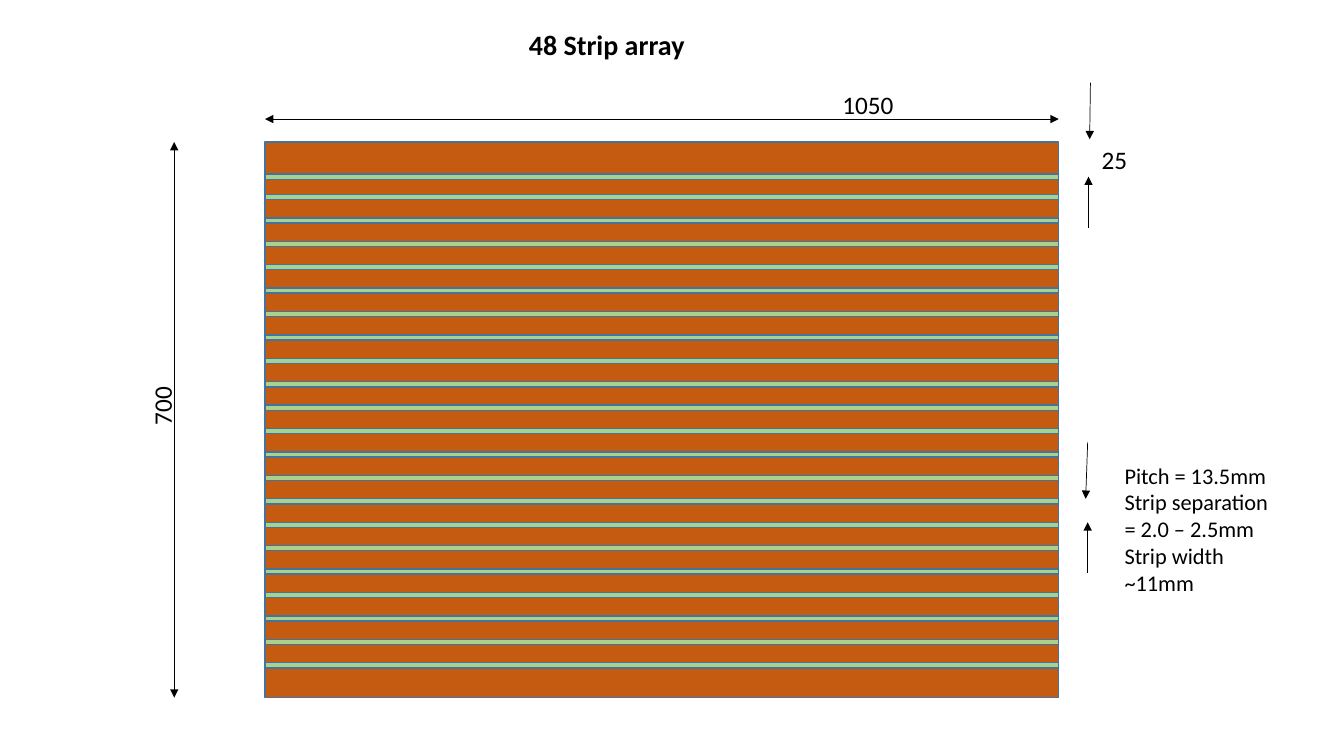
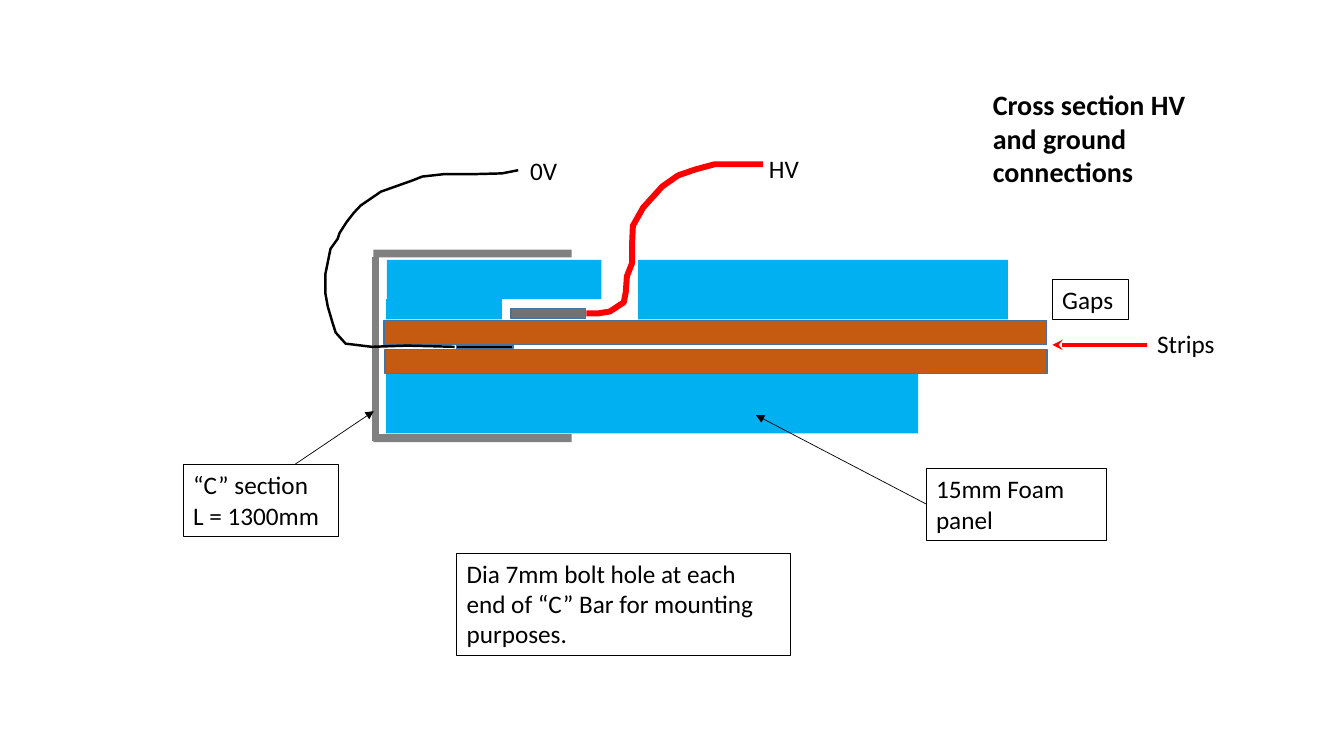
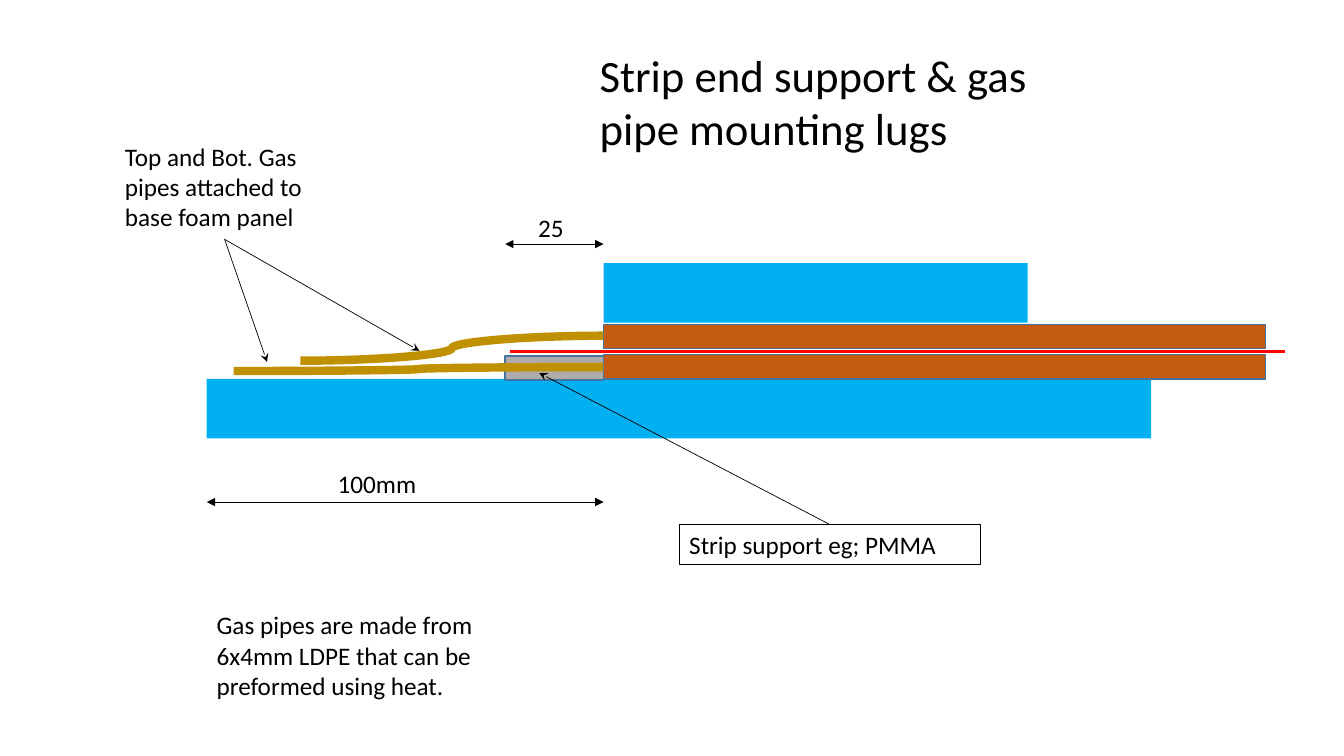
"""Draw three slides about a strip array: strip layout, HV cross section, strip end support."""
from typing import NamedTuple, Optional

from lxml import etree
from pptx import Presentation
from pptx import util as u
from pptx.dml.color import RGBColor
from pptx.enum import shapes, text
from pptx.oxml.ns import qn

FONT = "Calibri"
BLACK, WHITE, RED = "000000", "FFFFFF", "FF0000"
COPPER, GREEN, FOAM, EDGE = "C55A11", "A9D18E", "00B0F0", "43739E"
STEEL, PLATE, SUPPORT, PIPE = "808080", "767171", "AFABAB", "BF9000"
GAP_W, GAP_H, FOAM_H, LINE_H = 16.69, 0.61, 1.5, 1.02


class Block(NamedTuple):
    x: float
    y: float
    w: float
    h: float
    fill: str
    edge: Optional[str] = None


class Label(NamedTuple):
    x: float
    y: float
    w: float
    h: float
    words: str
    size: int = 18
    bold: bool = False
    boxed: bool = False
    turn: int = 0


class Line(NamedTuple):
    x1: float
    y1: float
    x2: float
    y2: float
    tail: Optional[str] = "triangle"
    head: Optional[str] = None
    color: str = BLACK
    width: float = 0.5
    curved: bool = False


class Wire(NamedTuple):
    points: list
    color: str
    width: float


def rgb(value: str) -> RGBColor:
    return RGBColor.from_string(value)


def stroke(line, color: Optional[str], width: float) -> None:
    if color is None:
        line.fill.background()
    else:
        line.color.rgb = rgb(color)
        line.width = u.Pt(width)


def draw_block(s, b: Block) -> None:
    sp = s.shapes.add_shape(shapes.MSO_SHAPE.RECTANGLE, u.Cm(b.x), u.Cm(b.y), u.Cm(b.w), u.Cm(b.h))
    sp.shadow.inherit = False
    sp.fill.solid()
    sp.fill.fore_color.rgb = rgb(b.fill)
    stroke(sp.line, b.edge, 1)


def draw_label(s, b: Label) -> None:
    sp = s.shapes.add_textbox(u.Cm(b.x), u.Cm(b.y), u.Cm(b.w), u.Cm(b.h))
    sp.rotation = b.turn
    if b.boxed:
        stroke(sp.line, BLACK, 0.75)
    tf = sp.text_frame
    tf.word_wrap = True
    tf.auto_size = text.MSO_AUTO_SIZE.SHAPE_TO_FIT_TEXT
    tf.text = b.words
    for p in tf.paragraphs:
        for r in p.runs:
            r.font.name, r.font.size, r.font.bold = FONT, u.Pt(b.size), b.bold
            r.font.color.rgb = rgb(BLACK)


def draw_line(s, b: Line) -> None:
    kind = shapes.MSO_CONNECTOR.CURVE if b.curved else shapes.MSO_CONNECTOR.STRAIGHT
    cn = s.shapes.add_connector(kind, u.Cm(b.x1), u.Cm(b.y1), u.Cm(b.x2), u.Cm(b.y2))
    stroke(cn.line, b.color, b.width)
    spPr = cn.element.spPr
    ln = spPr.find(qn("a:ln"))
    for tag, end in (("a:headEnd", b.head), ("a:tailEnd", b.tail)):
        if end:
            etree.SubElement(ln, qn(tag)).set("type", end)
    etree.SubElement(spPr, qn("a:effectLst"))


def draw_wire(s, b: Wire) -> None:
    pts = [(u.Cm(x), u.Cm(y)) for x, y in b.points]
    fb = s.shapes.build_freeform(*pts[0])
    fb.add_line_segments(pts[1:], close=False)
    sp = fb.convert_to_shape()
    sp.shadow.inherit = False
    sp.fill.background()
    stroke(sp.line, b.color, b.width)


DRAW = {Block: draw_block, Label: draw_label, Line: draw_line, Wire: draw_wire}


def gas_gap(x: float, y: float) -> Block:
    return Block(x, y, GAP_W, GAP_H, COPPER, EDGE)


def foam(x: float, y: float, w: float, h: float = FOAM_H) -> Block:
    return Block(x, y, w, h, FOAM)


def dimension(x1: float, y1: float, x2: float, y2: float) -> Line:
    return Line(x1, y1, x2, y2, head="triangle")


def strip_array() -> list:
    left, top, width, height = 6.68, 3.58, 20, 14
    right, bottom = left + width, top + height
    separators = [4.39] + [4.9 + 0.59 * i for i in range(21)]
    return [
        Block(left, top, width, height, COPPER, EDGE),
        *(Block(left, y, width, 0.13, GREEN, EDGE) for y in separators),
        Label(13.08, 0.58, 7.9, 1.12, "48 Strip array", 20, True),
        dimension(4.39, top, 4.39, bottom),
        Label(3.33, 9.7, 1.5, LINE_H, "700", turn=270),
        Line(27.41, 11.15, 27.36, 12.57),
        Line(27.41, 14.43, 27.41, 13.16),
        Label(28.09, 11.51, 4.32, 3.68,
              "Pitch = 13.5mm\nStrip separation = 2.0 – 2.5mm\nStrip width ~11mm", 16),
        dimension(left, 3, right, 3),
        Label(20.98, 2.13, 2.26, LINE_H, "1050"),
        Line(27.48, 2.08, 27.46, 3.51),
        Line(27.43, 5.74, 27.43, 4.45),
        Label(27.51, 3.51, 1.24, LINE_H, "25"),
    ]


def cross_section() -> list:
    hv = [(14.78, 7.9), (15.06, 7.9), (15.37, 7.85), (15.72, 7.62), (15.77, 7.37),
          (15.8, 6.96), (15.93, 6.63), (15.93, 6.15), (15.95, 5.69), (16.21, 5.23),
          (16.69, 4.7), (17.09, 4.42), (17.53, 4.27), (18.01, 4.14), (19.23, 4.14)]
    ground = [(11.46, 8.74), (10.26, 8.71), (9.37, 8.74), (8.71, 8.66), (8.46, 8.38),
              (8.38, 8.13), (8.26, 7.72), (8.2, 7.39), (8.2, 6.91), (8.33, 6.27),
              (8.51, 6.02), (8.56, 5.87), (8.74, 5.59), (8.92, 5.36), (9.09, 5.18),
              (9.6, 4.83), (10.39, 4.55), (10.64, 4.45), (11.18, 4.39), (11.89, 4.39),
              (12.65, 4.37), (13.06, 4.29)]
    return [
        Block(9.37, 6.45, 0.2, 4.67, STEEL, WHITE),
        *(Block(9.41, y, 5, 0.2, STEEL) for y in (6.29, 10.94)),
        foam(16.08, 6.55, 9.32),
        foam(9.75, 6.55, 5.41, 0.99),
        foam(9.73, 7.54, 2.92, 0.51),
        gas_gap(9.68, 8.08),
        foam(9.73, 9.42, 13.41),
        Block(12.88, 7.77, 1.88, 0.25, PLATE, EDGE),
        Wire(hv, RED, 4.25),
        Label(24.77, 2.08, 6.25, 2.82, "Cross section HV and ground connections", 20, True),
        Block(11.51, 8.69, 1.42, 0.1, BLACK, EDGE),
        Label(26.52, 7.04, 1.93, LINE_H, "Gaps", boxed=True),
        Label(4.62, 11.71, 3.91, 1.8, "“C” section\nL = 1300mm", boxed=True),
        Label(23.34, 11.81, 4.55, 1.8, "15mm Foam panel", boxed=True),
        Line(7.42, 11.71, 9.42, 10.36),
        gas_gap(9.7, 8.81),
        Wire(ground, BLACK, 1.75),
        Label(28.91, 8.15, 2.11, LINE_H, "Strips"),
        Line(28.91, 8.69, 26.52, 8.69, "stealth", color=RED, width=2.5),
        Line(23.34, 12.7, 19.05, 10.46),
        Label(19.13, 3.73, 1.3, LINE_H, "HV"),
        Label(13.11, 3.78, 1.3, LINE_H, "0V"),
        Label(11.51, 13.94, 8.41, 2.57,
              "Dia 7mm bolt hole at each end of “C” Bar for mounting purposes.", boxed=True),
    ]


def strip_end() -> list:
    base, end, support = 5.21, 15.21, 12.73
    return [
        foam(end, 6.63, 10.69),
        foam(base, 9.55, 23.8),
        gas_gap(end, 8.18),
        Block(support, 8.97, end - support, GAP_H, SUPPORT, EDGE),
        gas_gap(end, 8.94),
        Line(12.85, 8.86, 32.39, 8.86, None, color=RED, width=2),
        Line(end, 8.46, 7.57, 9.09, None, color=PIPE, width=6, curved=True),
        Line(end, 9.25, 5.89, 9.35, None, color=PIPE, width=6, curved=True),
        Label(14.86, 1.07, 12.67, 3, "Strip end support & gas pipe mounting lugs", 32),
        Label(17.12, 13.21, 7.59, LINE_H, "Strip support eg; PMMA", boxed=True),
        Line(20.9, 13.21, 13.59, 9.4, "stealth"),
        dimension(base, 12.65, end, 12.65),
        Label(8.26, 11.68, 3.15, LINE_H, "100mm"),
        Label(2.9, 3.43, 6.02, 2.57, "Top and Bot. Gas pipes attached to base foam panel"),
        *(Line(5.66, 6.03, x, y, "stealth") for x, y in ((10.57, 8.84), (6.73, 9.12))),
        Label(base, 15.24, 8.36, 2.57,
              "Gas pipes are made from 6x4mm LDPE that can be preformed using heat."),
        dimension(support, 6.15, end, 6.15),
        Label(13.31, 5.23, 1.32, LINE_H, "25"),
    ]


def main() -> None:
    prs = Presentation()
    prs.slide_width, prs.slide_height = u.Cm(33.87), u.Cm(19.05)
    for items in (strip_array(), cross_section(), strip_end()):
        s = prs.slides.add_slide(prs.slide_layouts[6])
        for item in items:
            DRAW[type(item)](s, item)
    prs.save("out.pptx")


if __name__ == "__main__":
    main()
